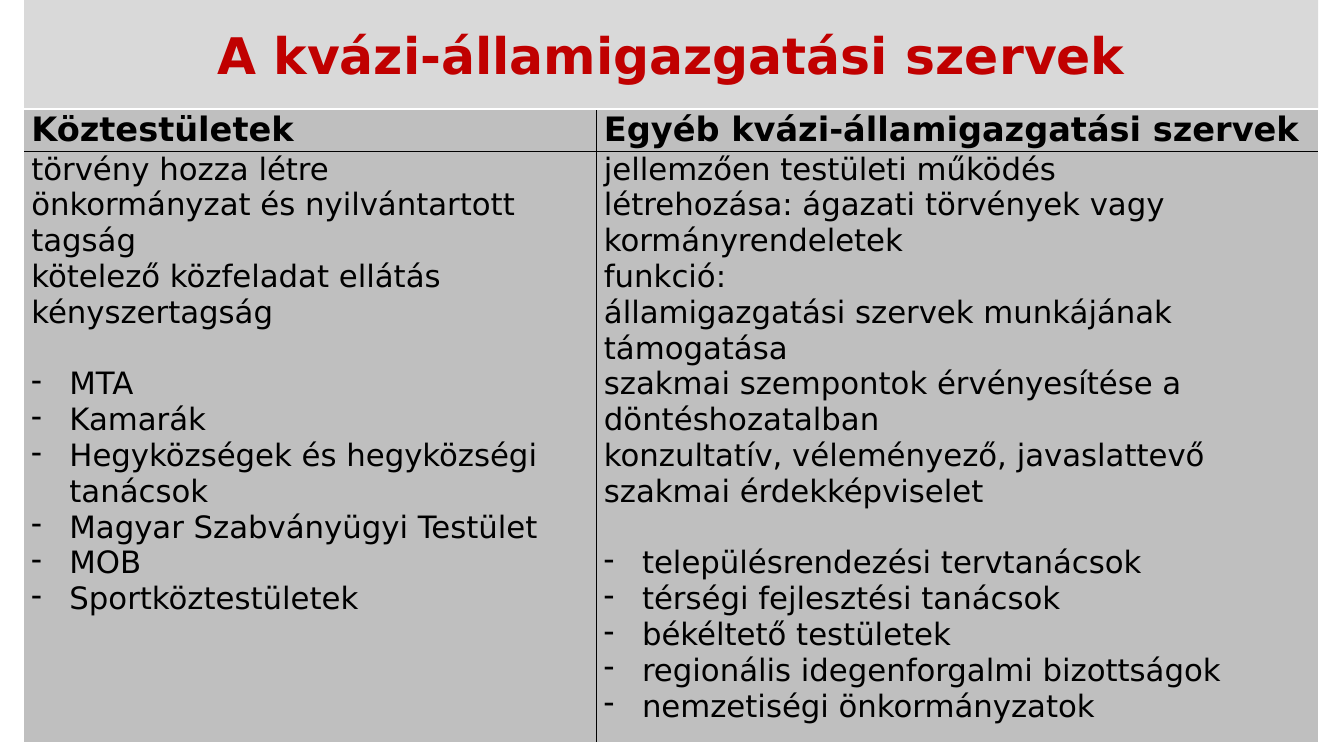
from lxml import etree
from pptx import Presentation
from pptx.dml.color import RGBColor
from pptx.enum.shapes import MSO_SHAPE
from pptx.enum.text import MSO_ANCHOR, PP_ALIGN
from pptx.oxml.ns import qn
from pptx.util import Cm, Pt

RECTANGLE = MSO_SHAPE.RECTANGLE
MIDDLE = MSO_ANCHOR.MIDDLE
CENTER = PP_ALIGN.CENTER

TITLE = "A kvázi-államigazgatási szervek"
COLUMNS = [
    {
        "heading": "Köztestületek",
        "features": [
            "törvény hozza létre",
            "önkormányzat és nyilvántartott tagság",
            "kötelező közfeladat ellátás",
            "kényszertagság",
        ],
        "examples": [
            "MTA",
            "Kamarák",
            "Hegyközségek és hegyközségi tanácsok",
            "Magyar Szabványügyi Testület",
            "MOB",
            "Sportköztestületek",
        ],
    },
    {
        "heading": "Egyéb kvázi-államigazgatási szervek",
        "features": [
            "jellemzően testületi működés",
            "létrehozása: ágazati törvények vagy kormányrendeletek",
            "funkció:",
            "államigazgatási szervek munkájának támogatása",
            "szakmai szempontok érvényesítése a döntéshozatalban",
            "konzultatív, véleményező, javaslattevő",
            "szakmai érdekképviselet",
        ],
        "examples": [
            "településrendezési tervtanácsok",
            "térségi fejlesztési tanácsok",
            "békéltető testületek",
            "regionális idegenforgalmi bizottságok",
            "nemzetiségi önkormányzatok",
        ],
    },
]

COLORS = {"banner": "D9D9D9", "title": "C00000", "cell": "BFBFBF", "ink": "000000"}
FONT = "DejaVu Sans"
TITLE_FORMAT = {"name": FONT, "size": Pt(36), "bold": True}
HEADING_FORMAT = {"name": FONT, "size": Pt(24), "bold": True}
BODY_FORMAT = {"name": FONT, "size": Pt(22), "bold": False}

LEFT, WIDTH = Cm(0.61), Cm(32.61)
BANNER_HEIGHT = Cm(2.72)
TABLE_TOP = Cm(2.78)
COLUMN_WIDTHS = [Cm(14.43), Cm(18.18)]
ROW_HEIGHTS = [Cm(1.04), Cm(14.88)]
CELL_MARGINS = {"margin_left": Cm(0.18), "margin_right": Cm(0.18),
                "margin_top": 0, "margin_bottom": 0}
BULLET_INDENT = Cm(0.96)
EXAMPLES_GAP = Pt(25.6)
BORDER_WIDTH = Pt(1)


def set_all(target, values):
    for name, value in values.items():
        setattr(target, name, value)


def paint(fill, color):
    fill.solid()
    fill.fore_color.rgb = RGBColor.from_string(COLORS[color])


def write(para, text, text_format, color="ink"):
    span = para.add_run()
    span.text = text
    set_all(span.font, text_format)
    span.font.color.rgb = RGBColor.from_string(COLORS[color])


def add_dash(para):
    properties = para._p.get_or_add_pPr()
    properties.set("marL", str(BULLET_INDENT))
    properties.set("indent", str(-BULLET_INDENT))
    etree.SubElement(properties, qn("a:buChar")).set("char", "-")


def add_borders(cell, row, column):
    """Rule only the edges that this cell shares with a neighbour."""
    inner = {"lnL": column == 1, "lnR": column == 0,
             "lnT": row == 1, "lnB": row == 0}
    properties = cell._tc.get_or_add_tcPr()
    for edge, ruled in inner.items():
        line = etree.SubElement(properties, qn(f"a:{edge}"))
        line.set("w", str(BORDER_WIDTH))
        if ruled:
            fill = etree.SubElement(line, qn("a:solidFill"))
            etree.SubElement(fill, qn("a:srgbClr")).set("val", COLORS["ink"])
        else:
            etree.SubElement(line, qn("a:noFill"))


def fill_body(frame, features, examples):
    for index, text in enumerate(features + examples):
        para = frame.add_paragraph() if index else frame.paragraphs[0]
        if index == len(features):
            para.space_before = EXAMPLES_GAP
        if index >= len(features):
            add_dash(para)
        write(para, text, BODY_FORMAT)


def add_banner(page):
    banner = page.shapes.add_shape(RECTANGLE, LEFT, 0, WIDTH, BANNER_HEIGHT)
    banner.shadow.inherit = False
    paint(banner.fill, "banner")
    banner.line.fill.background()
    frame = banner.text_frame
    set_all(frame, {"word_wrap": True, "vertical_anchor": MIDDLE})
    para = frame.paragraphs[0]
    para.alignment = CENTER
    write(para, TITLE, TITLE_FORMAT, "title")


def add_comparison(page):
    table = page.shapes.add_table(len(ROW_HEIGHTS), len(COLUMNS), LEFT, TABLE_TOP,
                                  WIDTH, sum(ROW_HEIGHTS)).table
    set_all(table, {"first_row": False, "horz_banding": False})
    for column, width in zip(table.columns, COLUMN_WIDTHS):
        column.width = width
    for row, height in zip(table.rows, ROW_HEIGHTS):
        row.height = height
    for column, content in enumerate(COLUMNS):
        for row in range(len(ROW_HEIGHTS)):
            cell = table.cell(row, column)
            set_all(cell, CELL_MARGINS)
            add_borders(cell, row, column)
            paint(cell.fill, "cell")
        heading, body = (table.cell(row, column).text_frame for row in (0, 1))
        write(heading.paragraphs[0], content["heading"], HEADING_FORMAT)
        fill_body(body, content["features"], content["examples"])


def main():
    deck = Presentation()
    set_all(deck, {"slide_width": Cm(33.87), "slide_height": Cm(19.05)})
    page = deck.slides.add_slide(deck.slide_layouts[6])
    add_banner(page)
    add_comparison(page)
    deck.save("out.pptx")


if __name__ == "__main__":
    main()
